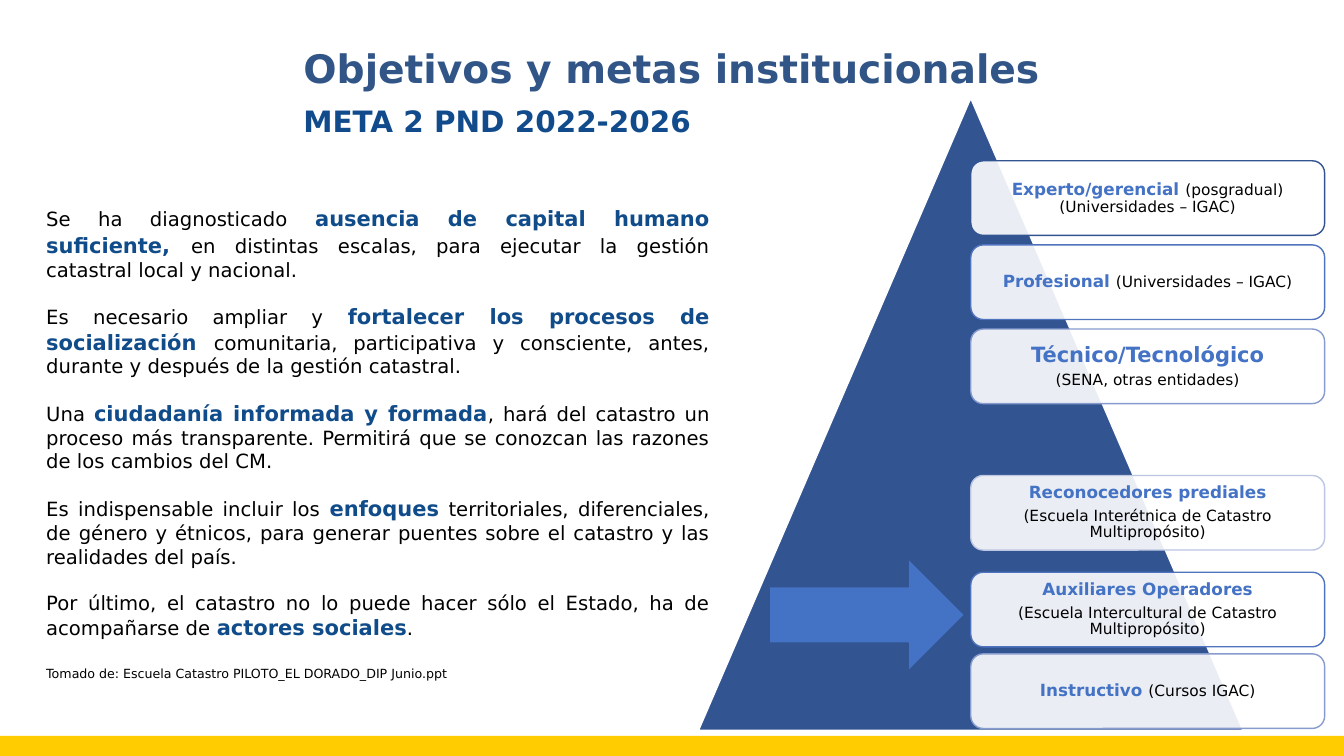
from dataclasses import dataclass
from typing import NamedTuple

from lxml.etree import SubElement
from pptx import Presentation
from pptx.dml.color import RGBColor
from pptx.enum.shapes import MSO_SHAPE as Preset
from pptx.enum.text import MSO_ANCHOR as Anchor, MSO_AUTO_SIZE as AutoSize, PP_ALIGN as Align
from pptx.oxml.ns import qn
from pptx.util import Inches, Pt


@dataclass(frozen=True)
class Theme:
    font: str = "DejaVu Sans"
    title: str = "315587"
    subtitle: str = "114B8C"
    emphasis: str = "104B8A"
    ink: str = "000000"
    white: str = "FFFFFF"
    navy: str = "325491"
    blue: str = "4472C4"
    medium: str = "4F73BD"
    soft: str = "879BCE"
    pale: str = "BCC6E2"
    yellow: str = "FFCC01"
    title_size: float = 28
    subtitle_size: float = 21
    body_size: float = 14
    strong_size: float = 15
    wide_space_size: float = 16
    source_size: float = 9
    level_size: float = 12
    detail_size: float = 11


class Box(NamedTuple):
    """Left, top, width and height as percentages of the slide."""
    left: float
    top: float
    width: float
    height: float


class Span(NamedTuple):
    text: str
    size: float
    color: str
    bold: bool = False


class Level(NamedTuple):
    row: float
    outline: str
    lines: list[list[Span]]


THEME = Theme()
WIDTH, HEIGHT = Inches(13.33), Inches(7.5)
FIRST_CARD = Box(72.23, 21.27, 26.33, 9.87)
CARD_STEP = 11.13


def body(text: str) -> Span:
    return Span(text, THEME.body_size, THEME.ink)


def strong(text: str) -> Span:
    return Span(text, THEME.strong_size, THEME.emphasis, True)


def level(text: str, size: float = THEME.level_size) -> Span:
    return Span(text, size, THEME.blue, True)


def detail(text: str) -> Span:
    return Span(text, THEME.detail_size, THEME.ink)


DIAGNOSIS = [
    [body("Se ha diagnosticado "), strong("ausencia de capital humano suficiente,"),
     Span(" ", THEME.wide_space_size, THEME.emphasis, True),
     body("en distintas escalas, para ejecutar la gestión catastral local y nacional.")],
    [body("Es necesario ampliar y "), strong("fortalecer los procesos de socialización "),
     body("comunitaria, participativa y consciente, antes, durante y después de la gestión catastral.")],
    [body("Una "), strong("ciudadanía informada y formada"),
     body(", hará del catastro un proceso más transparente. Permitirá que se conozcan "
          "las razones de los cambios del CM.")],
    [body("Es indispensable incluir los "), strong("enfoques"),
     body(" territoriales, diferenciales, de género y étnicos, para generar puentes "
          "sobre el catastro y las realidades del país.")],
    [body("Por último, el catastro no lo puede hacer sólo el Estado, ha de acompañarse de "),
     strong("actores sociales"), body(".")],
    [Span("Tomado de: Escuela Catastro PILOTO_EL DORADO_DIP Junio.ppt",
          THEME.source_size, THEME.ink)],
]

LEVELS = [
    Level(0, THEME.navy, [[level("Experto/gerencial "),
                           detail("(posgradual) (Universidades – IGAC)")]]),
    Level(1, THEME.medium, [[level("Profesional "), detail("(Universidades – IGAC)")]]),
    Level(2, THEME.soft, [[level("Técnico/Tecnológico", THEME.strong_size)],
                          [detail("(SENA, otras entidades)")]]),
    Level(3.74, THEME.pale, [[level("Reconocedores prediales")],
                             [detail("(Escuela Interétnica de Catastro Multipropósito)")]]),
    Level(4.89, THEME.medium, [[level("Auxiliares Operadores")],
                               [detail("(Escuela Intercultural de Catastro Multipropósito)")]]),
    Level(5.86, THEME.soft, [[level("Instructivo "), detail("(Cursos IGAC)")]]),
]


def place(box: Box) -> tuple[int, int, int, int]:
    return (int(WIDTH * box.left / 100), int(HEIGHT * box.top / 100),
            int(WIDTH * box.width / 100), int(HEIGHT * box.height / 100))


def write(frame, lines: list[list[Span]], align: Align, gap: float = 0) -> None:
    """Fill a frame with paragraphs, separated by gap points."""
    for index, spans in enumerate(lines):
        paragraph = frame.add_paragraph() if index else frame.paragraphs[0]
        paragraph.alignment = align
        paragraph.space_before = Pt(gap if index else 0)
        for span in spans:
            run = paragraph.add_run()
            run.text = span.text
            run.font.name = THEME.font
            run.font.size = Pt(span.size)
            run.font.bold = span.bold
            run.font.color.rgb = RGBColor.from_string(span.color)


def add_figure(slide, preset: Preset, box: Box, fill: str, outline: str = "", opacity: int = 100):
    figure = slide.shapes.add_shape(preset, *place(box))
    figure.shadow.inherit = False
    figure.fill.solid()
    figure.fill.fore_color.rgb = RGBColor.from_string(fill)
    if opacity < 100:
        color = figure.fill._xPr.find(qn("a:solidFill"))[0]
        SubElement(color, qn("a:alpha")).set("val", str(opacity * 1000))
    if outline:
        figure.line.color.rgb = RGBColor.from_string(outline)
        figure.line.width = Pt(1)
    else:
        figure.line.fill.background()
    return figure


def add_card(slide, item: Level) -> None:
    box = FIRST_CARD._replace(top=FIRST_CARD.top + item.row * CARD_STEP)
    frame = add_figure(slide, Preset.ROUNDED_RECTANGLE, box, THEME.white,
                       item.outline, opacity=90).text_frame
    frame.word_wrap = True
    frame.vertical_anchor = Anchor.MIDDLE
    frame.margin_left = frame.margin_right = Inches(0.05)
    frame.margin_top = frame.margin_bottom = Inches(0.05)
    write(frame, item.lines, Align.CENTER, gap=4)
    for paragraph in frame.paragraphs:
        paragraph.line_spacing = 0.9


def add_text(slide, box: Box, lines: list[list[Span]], align: Align,
             gap: float = 0, wrap: bool = True):
    frame = slide.shapes.add_textbox(*place(box)).text_frame
    frame.word_wrap = wrap
    write(frame, lines, align, gap)
    return frame


def main() -> None:
    deck = Presentation()
    deck.slide_width, deck.slide_height = WIDTH, HEIGHT
    slide = deck.slides.add_slide(deck.slide_layouts[5])

    # Footer band
    add_figure(slide, Preset.RECTANGLE, Box(0, 97.33, 100, 2.67), THEME.yellow)

    # Title and subtitle
    heading = slide.shapes.title
    heading.left, heading.top, heading.width, heading.height = place(Box(21.83, 5.2, 56.63, 7.6))
    heading.text_frame.word_wrap = False
    heading.text_frame.auto_size = AutoSize.NONE
    heading.text_frame.vertical_anchor = Anchor.TOP
    write(heading.text_frame, [[Span("Objetivos y metas institucionales",
                                     THEME.title_size, THEME.title, True)]], Align.LEFT)
    add_text(slide, Box(21.83, 12.93, 31.05, 6),
             [[Span("META 2 PND 2022-2026", THEME.subtitle_size, THEME.subtitle, True)]],
             Align.LEFT, wrap=False)

    # Diagnosis, with its source as the last paragraph
    diagnosis = add_text(slide, Box(2.7, 26.53, 50.85, 65.07), DIAGNOSIS, Align.JUSTIFY, gap=16.3)
    diagnosis.paragraphs[-1].space_before = Pt(18.6)

    # Pyramid of training levels
    add_figure(slide, Preset.ISOSCELES_TRIANGLE, Box(51.98, 13, 40.5, 83.6),
               THEME.navy, THEME.white)
    for item in LEVELS:
        add_card(slide, item)

    # Arrow to the operators' level
    add_figure(slide, Preset.RIGHT_ARROW, Box(57.23, 73.87, 14.55, 14.93),
               THEME.blue, THEME.navy)

    deck.save("out.pptx")


if __name__ == "__main__":
    main()
